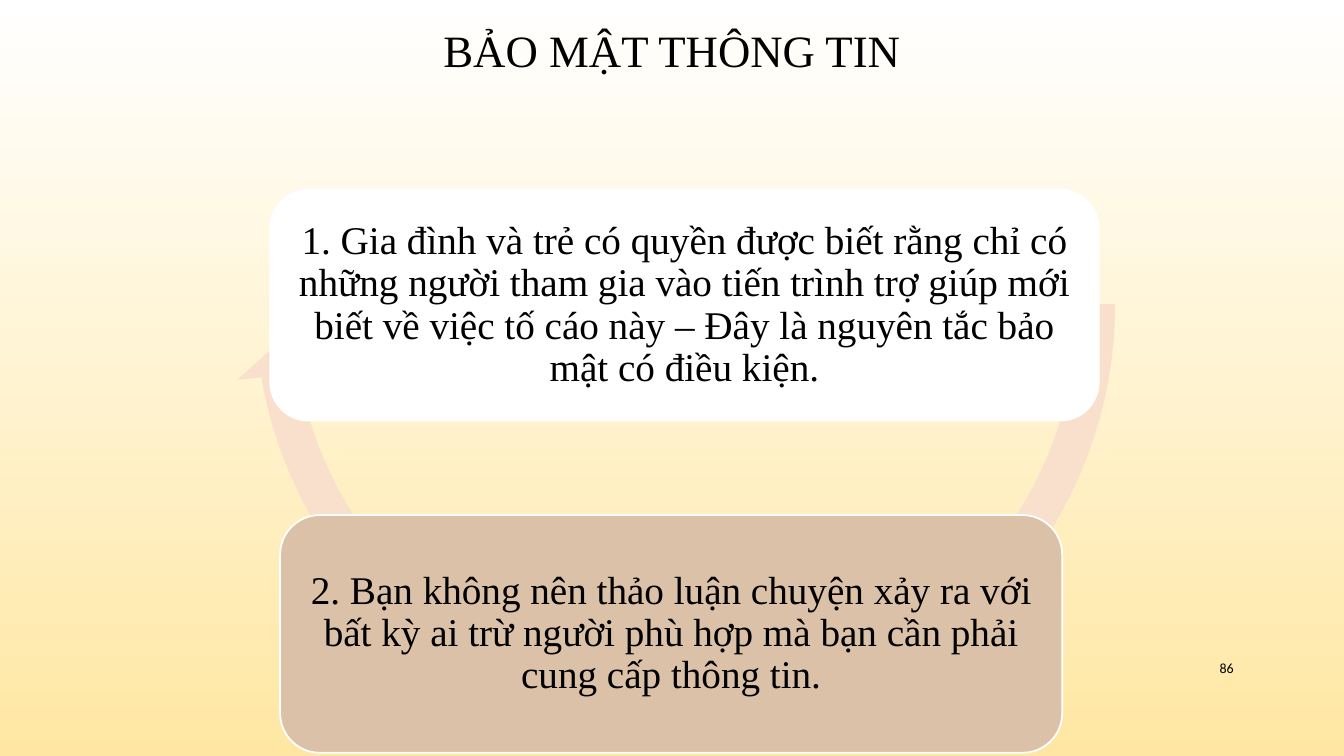
import pptx
import pptx.util
import pptx.dml.color
import pptx.enum.shapes
import pptx.enum.text

Cm = pptx.util.Cm
Pt = pptx.util.Pt
RGB = pptx.dml.color.RGBColor
Kind = pptx.enum.shapes.MSO_SHAPE
Align = pptx.enum.text.PP_ALIGN
Mid = pptx.enum.text.MSO_ANCHOR.MIDDLE

BLACK = RGB(0, 0, 0)
WHITE = RGB(0xFF, 0xFF, 0xFF)
CREAM = RGB(0xFF, 0xE7, 0xA3)
PEACH = RGB(0xF9, 0xE0, 0xCD)
TAN = RGB(0xDB, 0xC1, 0xA7)

TITLE = ("BẢO MẬT THÔNG TIN", (0, 0.43, 33.87, 1.8))
CARDS = [
    ("1. Gia đình và trẻ có quyền được biết rằng chỉ có những người tham gia "
     "vào tiến trình trợ giúp mới biết về việc tố cáo này – Đây là nguyên tắc "
     "bảo mật có điều kiện.", (6.81, 4.78, 20.88, 5.82), WHITE),
    ("2. Bạn không nên thảo luận chuyện xảy ra với bất kỳ ai trừ người phù hợp "
     "mà bạn cần phải cung cấp thông tin.", (7.06, 12.98, 19.71, 5.99), TAN),
]
ARROW = (5.82, -3.78, 22.89, 22.89)
BENDS = (0.041, 2.558, 102.005, -13.751, 0.047)
PAGE = ("86", (29.21, 16.33, 2.13, 1.02))

HEAD = {"name": "Times New Roman", "size": Pt(32)}
BODY = {"name": "Times New Roman", "size": Pt(28)}
SMALL = {"name": "Calibri", "size": Pt(10)}
TIGHT = {"alignment": Align.CENTER, "line_spacing": 0.9}
RIGHT = {"alignment": Align.RIGHT}
FRAME = {"word_wrap": True, "vertical_anchor": Mid}
SIDES = ("left", "top", "right", "bottom")
INSET = {f"margin_{side}": Cm(0.3) for side in SIDES}


def apply(item, form):
    for key, value in form.items():
        setattr(item, key, value)


def place(spot):
    return [Cm(n) for n in spot]


def write(shape, text, font, para, frame):
    box = shape.text_frame
    apply(box, frame)
    line = box.paragraphs[0]
    apply(line, para)
    run = line.add_run()
    run.text = text
    apply(run.font, font)
    run.font.color.rgb = BLACK


def draw(slide, kind, spot, color):
    shape = slide.shapes.add_shape(kind, *place(spot))
    shape.shadow.inherit = False
    shape.fill.solid()
    shape.fill.fore_color.rgb = color
    return shape


def main():
    deck = pptx.Presentation()
    deck.slide_width, deck.slide_height = Cm(33.87), Cm(19.05)
    slide = deck.slides.add_slide(deck.slide_layouts[5])

    back = slide.background.fill
    back.gradient()
    back.gradient_angle = 270
    for stop, color in zip(back.gradient_stops, (WHITE, CREAM)):
        stop.color.rgb = color

    text, spot = TITLE
    title = slide.shapes.title
    apply(title, dict(zip(("left", "top", "width", "height"), place(spot))))
    write(title, text, HEAD, TIGHT, FRAME)

    arrow = draw(slide, Kind.CIRCULAR_ARROW, ARROW, PEACH)
    arrow.line.fill.background()
    for i, bend in enumerate(BENDS):
        arrow.adjustments[i] = bend

    for text, spot, color in CARDS:
        card = draw(slide, Kind.ROUNDED_RECTANGLE, spot, color)
        card.line.color.rgb = WHITE
        card.line.width = Pt(1.25)
        write(card, text, BODY, TIGHT, FRAME | INSET)

    text, spot = PAGE
    page = slide.shapes.add_textbox(*place(spot))
    write(page, text, SMALL, RIGHT, FRAME)

    deck.save("out.pptx")


if __name__ == "__main__":
    main()
